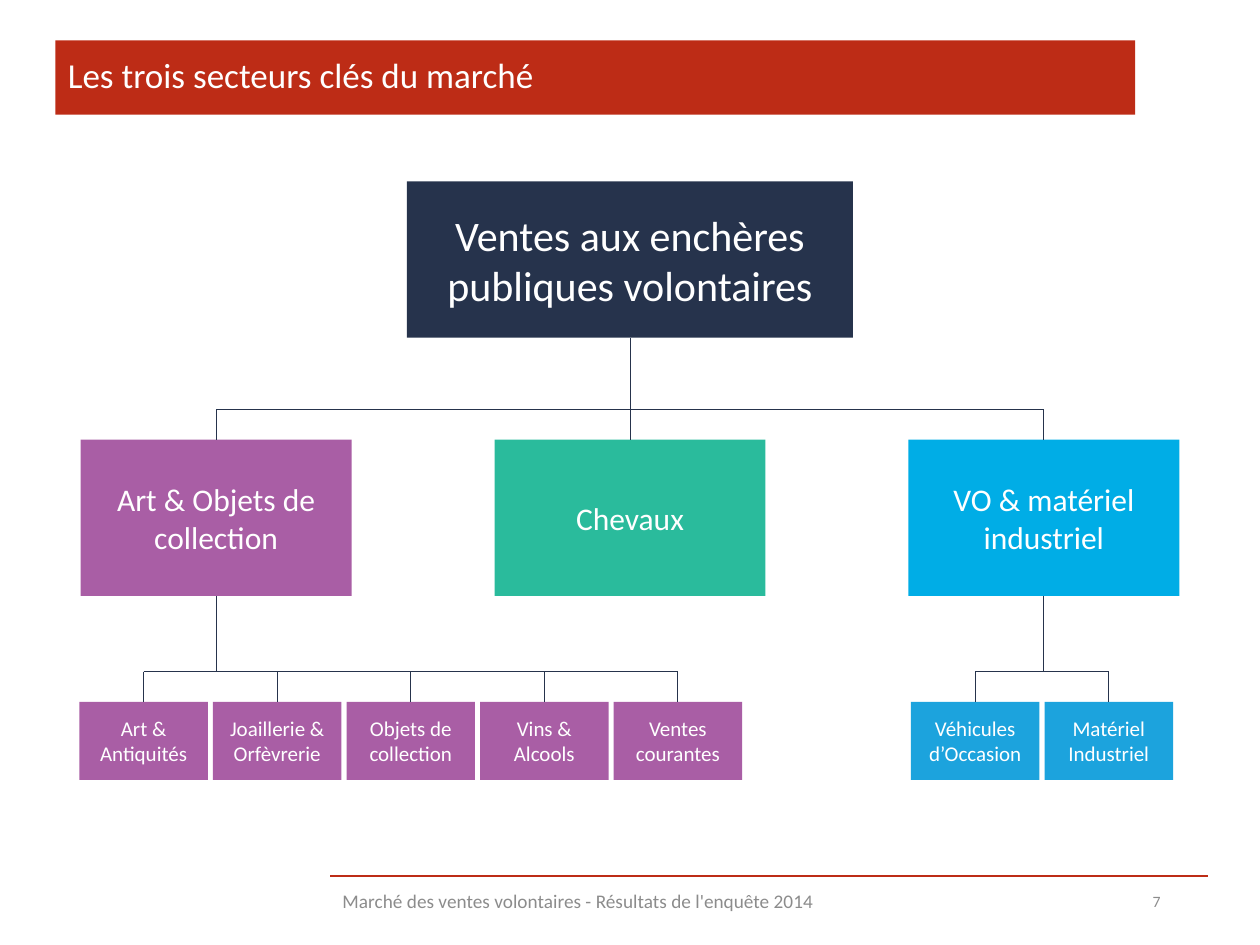
from dataclasses import dataclass

from lxml.etree import SubElement
from pptx import Presentation
from pptx.dml.color import RGBColor
from pptx.enum.shapes import MSO_CONNECTOR as Connector, MSO_SHAPE as Shape
from pptx.enum.text import MSO_ANCHOR as Anchor, PP_ALIGN as Align
from pptx.oxml.ns import qn
from pptx.util import Inches, Pt


@dataclass(frozen=True)
class Theme:
    font: str = "Calibri"
    white: str = "FFFFFF"
    red: str = "BD2C16"
    navy: str = "26334C"
    purple: str = "A95EA5"
    green: str = "2ABB9C"
    cyan: str = "00ADE6"
    blue: str = "1CA3DD"
    grey: str = "8C8C8C"
    title_size: float = 20
    root_size: float = 24
    sector_size: float = 18
    segment_size: float = 12
    footer_size: float = 11
    number_size: float = 9
    branch_width: float = 0.5
    rule_width: float = 1


class SlideBuilder:
    def __init__(self, page, theme):
        self.page = page
        self.theme = theme

    def fill_text(self, box, text, size, color, align):
        frame = box.text_frame
        frame.word_wrap = True
        frame.vertical_anchor = Anchor.MIDDLE
        para = frame.paragraphs[0]
        para.alignment = align
        span = para.add_run()
        span.text = text
        span.font.name = self.theme.font
        span.font.size = Pt(size)
        span.font.color.rgb = RGBColor.from_string(color)

    def label(self, area, text, size, color, align=Align.LEFT):
        box = self.page.shapes.add_textbox(*map(Inches, area))
        self.fill_text(box, text, size, color, align)

    def block(self, area, fill, text, size, align=Align.CENTER):
        box = self.page.shapes.add_shape(Shape.RECTANGLE, *map(Inches, area))
        box.shadow.inherit = False
        box.fill.solid()
        box.fill.fore_color.rgb = RGBColor.from_string(fill)
        box.line.fill.background()
        self.fill_text(box, text, size, self.theme.white, align)
        return box

    def line(self, start, end, color, width, above=None, below=None):
        """Draw a line, joined to the bottom of `above` and the top of `below` if given."""
        link = self.page.shapes.add_connector(
            Connector.STRAIGHT, *map(Inches, (*start, *end)))
        link.line.color.rgb = RGBColor.from_string(color)
        link.line.width = Pt(width)
        SubElement(link._element.spPr, qn("a:effectLst"))
        if above is not None:
            link.begin_connect(above, 2)
        if below is not None:
            link.end_connect(below, 0)

    def branch(self, start, end, **ends):
        self.line(start, end, self.theme.navy, self.theme.branch_width, **ends)

    def bracket(self, boxes, centers, bus, top):
        """Draw a horizontal bus with a drop to each box."""
        self.branch((centers[0], bus), (centers[-1], bus))
        for box, center in zip(boxes, centers):
            self.branch((center, bus), (center, top), below=box)

    def row(self, left, top, width, height, pitch, items, size):
        """Place equally spaced blocks; return them with their centres."""
        lefts = [left + i * pitch for i in range(len(items))]
        boxes = [self.block((x, top, width, height), fill, text, size)
                 for x, (text, fill) in zip(lefts, items)]
        return boxes, [x + width / 2 for x in lefts]


def main():
    theme = Theme()
    deck = Presentation()
    deck.slide_width, deck.slide_height = Inches(10), Inches(7.5)
    slide = SlideBuilder(deck.slides.add_slide(deck.slide_layouts[6]), theme)

    slide.line((2.62, 6.95), (9.59, 6.95), theme.red, theme.rule_width)
    title = slide.block((0.44, 0.32, 8.57, 0.59), theme.red,
                        "Les trois secteurs clés du marché", theme.title_size, Align.LEFT)
    title.text_frame.paragraphs[0].line_spacing = 0.9
    slide.label((7.06, 6.95, 2.25, 0.4), "7", theme.number_size, theme.grey, Align.RIGHT)
    slide.label((2.62, 6.95, 4.07, 0.4),
                "Marché des ventes volontaires - Résultats de l'enquête 2014",
                theme.footer_size, theme.grey)

    root = slide.block((3.23, 1.44, 3.54, 1.24), theme.navy,
                       "Ventes aux enchères publiques volontaires", theme.root_size)
    sector_top, sector_height, sector_bus = 3.49, 1.24, 3.25
    sector_width, sector_left = 2.15, 0.64
    sector_pitch = 5 - sector_width / 2 - sector_left
    sectors, sector_centers = slide.row(
        sector_left, sector_top, sector_width, sector_height, sector_pitch,
        [("Art & Objets de collection", theme.purple),
         ("Chevaux", theme.green),
         ("VO & matériel industriel", theme.cyan)], theme.sector_size)
    art, horses, vehicles = sectors
    slide.branch((5, 2.68), (5, sector_top), above=root, below=horses)
    slide.bracket((art, vehicles), (sector_centers[0], sector_centers[-1]),
                  sector_bus, sector_top)

    segment_top, segment_bus = 5.57, 5.33
    groups = [
        (art, sector_centers[0], 0.63, theme.purple,
         ["Art & Antiquités", "Joaillerie & Orfèvrerie", "Objets de collection",
          "Vins & Alcools", "Ventes courantes"]),
        (vehicles, sector_centers[-1], 7.23, theme.blue,
         ["Véhicules d’Occasion", "Matériel Industriel"]),
    ]
    for sector, center, left, fill, names in groups:
        segments, centers = slide.row(left, segment_top, 1.02, 0.62, 1.06,
                                      [(name, fill) for name in names], theme.segment_size)
        slide.branch((center, sector_top + sector_height), (center, segment_bus), above=sector)
        slide.bracket(segments, centers, segment_bus, segment_top)

    deck.save("out.pptx")


if __name__ == "__main__":
    main()
